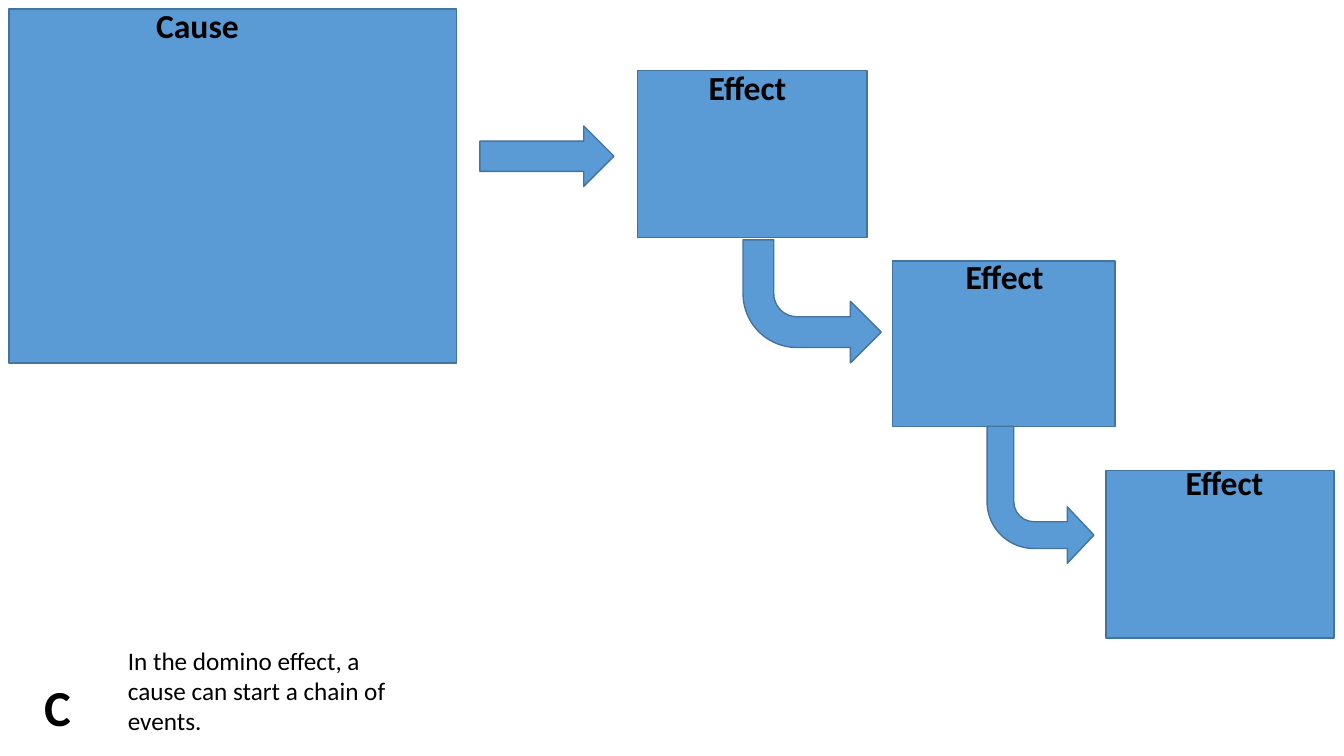
"""Build a slide showing the domino effect as a chain from cause to effects."""
from dataclasses import dataclass

from pptx import Presentation
from pptx import util as u
from pptx.dml.color import RGBColor
from pptx.enum import shapes, text
from pptx.oxml import ns

PX = 9144
FONT = "Calibri"
COLORS = {"fill": "5B9BD5", "line": "43739E", "text": "000000"}
RECT = shapes.MSO_SHAPE.RECTANGLE
BENT = shapes.MSO_SHAPE.BENT_ARROW
RIGHT = shapes.MSO_SHAPE.RIGHT_ARROW


@dataclass(frozen=True)
class Block:
    kind: shapes.MSO_SHAPE
    left: int
    top: int
    width: int
    height: int
    adjustments: tuple[float, ...] = ()


@dataclass(frozen=True)
class Label:
    words: str
    left: int
    top: int


BLOCKS = (
    Block(RECT, 632, 70, 228, 166),
    Block(RECT, 885, 259, 221, 164),
    Block(RECT, 1097, 467, 226, 166),
    Block(RECT, 9, 9, 444, 351),
    Block(BENT, 737, 238, 137, 122),
    Block(BENT, 979, 423, 106, 136, (0.25, 0.265, 0.25, 0.438)),
    Block(RIGHT, 476, 125, 133, 60),
)
LABELS = (
    Label("Cause", 145, 0),
    Label("Effect", 693, 61),
    Label("Effect", 948, 249),
    Label("Effect", 1166, 453),
)


def px(n: int) -> u.Emu:
    """Turn pixels into EMU."""
    return u.Emu(n * PX)


def color(name: str) -> RGBColor:
    """Look up a palette colour."""
    return RGBColor.from_string(COLORS[name])


def add_block(slide, block: Block) -> None:
    """Draw a box or an arrow; bent arrows turn downwards."""
    s = slide.shapes.add_shape(block.kind, px(block.left), px(block.top),
                               px(block.width), px(block.height))
    s.shadow.inherit = False
    s.fill.solid()
    s.fill.fore_color.rgb = color("fill")
    s.line.color.rgb = color("line")
    s.line.width = u.Pt(1)
    for i, value in enumerate(block.adjustments):
        s.adjustments[i] = value
    if block.kind == BENT:
        s._element.spPr.find(ns.qn("a:xfrm")).set("flipV", "1")


def add_text(slide, words: str, *, left: int, top: int, width: int, height: int,
             size: int = 24, bold: bool = True, wrap: bool = True) -> None:
    """Add a text box holding one formatted run."""
    s = slide.shapes.add_textbox(px(left), px(top), px(width), px(height))
    tf = s.text_frame
    tf.word_wrap = wrap
    tf.auto_size = text.MSO_AUTO_SIZE.SHAPE_TO_FIT_TEXT
    r = tf.paragraphs[0].add_run()
    r.text = words
    r.font.name = FONT
    r.font.size = u.Pt(size)
    r.font.bold = bold
    r.font.color.rgb = color("text")


def main() -> None:
    """Assemble and save the slide."""
    prs = Presentation()
    prs.slide_width, prs.slide_height = px(1333), px(750)
    slide = prs.slides.add_slide(prs.slide_layouts[6])
    for block in BLOCKS:
        add_block(slide, block)
    add_text(slide, "C", left=34, top=666, width=47, height=71, size=36, wrap=False)
    add_text(slide, "In the domino effect, a cause can start a chain of events.",
             left=117, top=635, width=276, height=101, size=18, bold=False)
    for label in LABELS:
        add_text(slide, label.words, left=label.left, top=label.top, width=192, height=50)
    prs.save("out.pptx")


if __name__ == "__main__":
    main()
